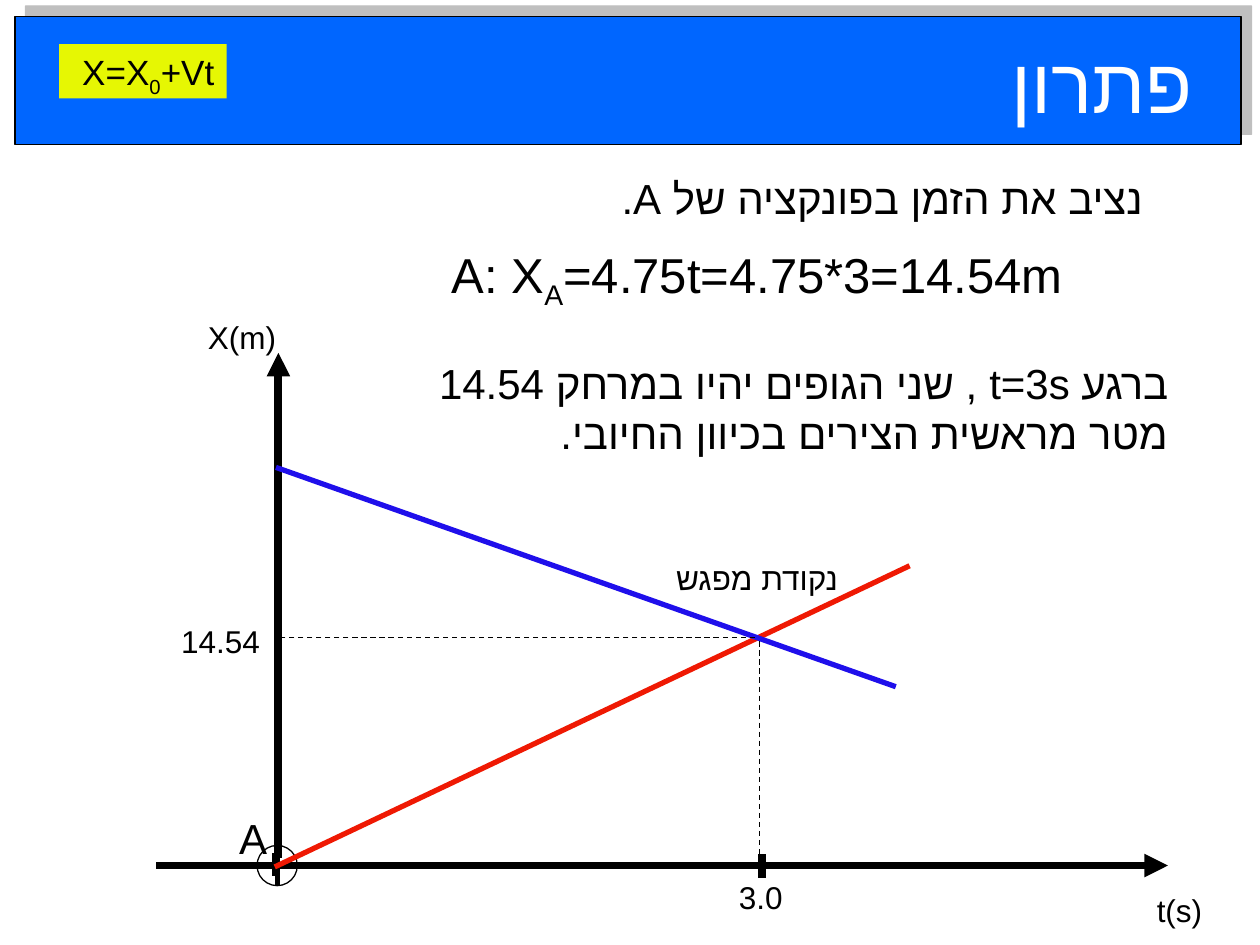
from lxml import etree
from pptx import Presentation
from pptx.dml.color import RGBColor
from pptx.enum.dml import MSO_LINE
from pptx.enum.shapes import MSO_CONNECTOR, MSO_SHAPE
from pptx.enum.text import MSO_ANCHOR, MSO_AUTO_SIZE, PP_ALIGN
from pptx.oxml.ns import qn
from pptx.util import Pt

FONT = "Arial"
BLACK, WHITE = "000000", "FFFFFF"


def color(hex_string):
    return RGBColor.from_string(hex_string)


def format_text(text_frame, size, hex_color=BLACK, rtl=True, subscript_run=None):
    """Right-align the first paragraph and format its runs."""
    text_frame.word_wrap = True
    text_frame.auto_size = MSO_AUTO_SIZE.SHAPE_TO_FIT_TEXT
    text_frame.vertical_anchor = MSO_ANCHOR.TOP
    paragraph = text_frame.paragraphs[0]
    paragraph.alignment = PP_ALIGN.RIGHT
    if rtl:
        paragraph._p.get_or_add_pPr().set("rtl", "1")
    for index, run in enumerate(paragraph.runs):
        run.font.size = Pt(size)
        run.font.name = FONT
        run.font.color.rgb = color(hex_color)
        properties = run.font._element
        etree.SubElement(properties, qn("a:cs")).set("typeface", FONT)
        if index == subscript_run:
            properties.set("baseline", "-25000")


def add_text(slide, box, text, size):
    shape = slide.shapes.add_textbox(*map(Pt, box))
    shape.text_frame.text = text
    format_text(shape.text_frame, size)
    return shape


def fill_formula(shape, parts, size):
    """Write runs of which the second is a subscript."""
    paragraph = shape.text_frame.paragraphs[0]
    for part in parts:
        paragraph.add_run().text = part
    format_text(shape.text_frame, size, subscript_run=1)


def add_box(slide, kind, box, fill=None, line=None):
    shape = slide.shapes.add_shape(kind, *map(Pt, box))
    shape.shadow.inherit = False
    if fill:
        shape.fill.solid()
        shape.fill.fore_color.rgb = color(fill)
    else:
        shape.fill.background()
    if line:
        shape.line.color.rgb = color(line)
        shape.line.width = Pt(0.75)
    else:
        shape.line.fill.background()
    return shape


def add_line(slide, ends, width, hex_color=BLACK, arrow=False, dashed=False):
    line = slide.shapes.add_connector(MSO_CONNECTOR.STRAIGHT, *map(Pt, ends))
    line.line.color.rgb = color(hex_color)
    line.line.width = Pt(width)
    if dashed:
        line.line.dash_style = MSO_LINE.DASH
    if arrow:
        tail = etree.SubElement(line.line._get_or_add_ln(), qn("a:tailEnd"))
        tail.set("type", "triangle")
    etree.SubElement(line._element.spPr, qn("a:effectLst"))


def add_header(slide, left, top, width, height):
    # Band with an offset shadow, placed behind the title
    band = add_box(slide, MSO_SHAPE.RECTANGLE, (left, top, width, height), "0066FF", BLACK)
    effects = band._element.spPr.find(qn("a:effectLst"))
    shadow = etree.SubElement(effects, qn("a:outerShdw"), dist=str(Pt(8.5)),
                              dir=str(315 * 60000), algn="ctr", rotWithShape="0")
    shade = etree.SubElement(shadow, qn("a:srgbClr"), val="808080")
    etree.SubElement(shade, qn("a:alpha"), val="50000")
    title = slide.shapes.title
    title.element.addprevious(band.element)

    # Title
    title.left, title.top = Pt(left + 31), Pt(top + 8)
    title.width, title.height = Pt(649.4), Pt(59.8)
    title.text_frame.text = "פתרון"
    format_text(title.text_frame, 44, WHITE, rtl=False)

    # Formula label
    label = add_box(slide, MSO_SHAPE.RECTANGLE, (left + 25.2, top + 15.8, 95.8, 31), "E6F703")
    fill_formula(label, ("X=X", "0", "+Vt"), 20)


def add_explanation(slide, left, top):
    intro = add_text(slide, (left, top, 595.4, 79.2), "נציב את הזמן בפונקציה של A.", 24)
    paragraph = intro.text_frame.paragraphs[0]
    paragraph.level = 1
    properties = paragraph._p.get_or_add_pPr()
    properties.set("marL", str(Pt(36)))
    properties.set("indent", "0")

    equation = slide.shapes.add_textbox(Pt(left + 99.4), Pt(top + 41), Pt(414), Pt(41))
    fill_formula(equation, ("A: X", "A", "=4.75t=4.75*3=14.54m"), 28)

    add_text(slide, (left + 121, top + 105.8, 452.9, 64.8),
             "ברגע t=3s , שני הגופים יהיו במרחק 14.54 מטר מראשית הצירים בכיוון החיובי.", 24)


def add_graph(slide, left, top):
    def line(x1, y1, x2, y2, width, **style):
        add_line(slide, (left + x1, top + y1, left + x2, top + y2), width, **style)

    def label(x, y, width, text, size=18, height=28.8):
        add_text(slide, (left + x, top + y, width, height), text, size)

    # Time axis, ticks and origin mark
    line(1.3, 316.6, 579.4, 316.6, 4.5, arrow=True)
    line(69.7, 309.4, 69.7, 322.4, 4.5)
    line(347.6, 310.2, 347.6, 323.8, 4.5)
    line(70.4, 305.1, 70.4, 328.2, 3)
    add_box(slide, MSO_SHAPE.OVAL, (left + 58.9, top + 305.1, 23, 23), line=BLACK)
    label(28.6, 282.8, 43.2, "A", 24, 36)

    # Position axis and axis names
    line(71.1, 312.3, 71.1, 23.6, 4.5, arrow=True)
    label(4.9, 0, 72, "X(m)")
    label(534.1, 327.4, 72, "t(s)")

    # Motion of the two bodies
    line(69, 317.4, 431.8, 145.3, 3, hex_color="EF1903")
    line(69.7, 89.1, 423.9, 214.4, 3, hex_color="1F0FEB")

    # Meeting point
    line(346.2, 188.5, 346.2, 317.4, 0.75, dashed=True)
    line(343.3, 186.3, 71.1, 186.3, 0.75, dashed=True)
    label(269.8, 138.1, 128.2, "נקודת מפגש")
    label(287.1, 320.2, 79.2, "3.0")
    label(0, 174.1, 67.7, "14.54")


def main():
    presentation = Presentation()
    presentation.slide_width, presentation.slide_height = Pt(720), Pt(540)
    slide = presentation.slides.add_slide(presentation.slide_layouts[5])
    add_header(slide, 8.6, 9.4, 700.6, 73.4)
    add_graph(slide, 88, 178)
    add_explanation(slide, 100.8, 95)
    presentation.save("out.pptx")


if __name__ == "__main__":
    main()
